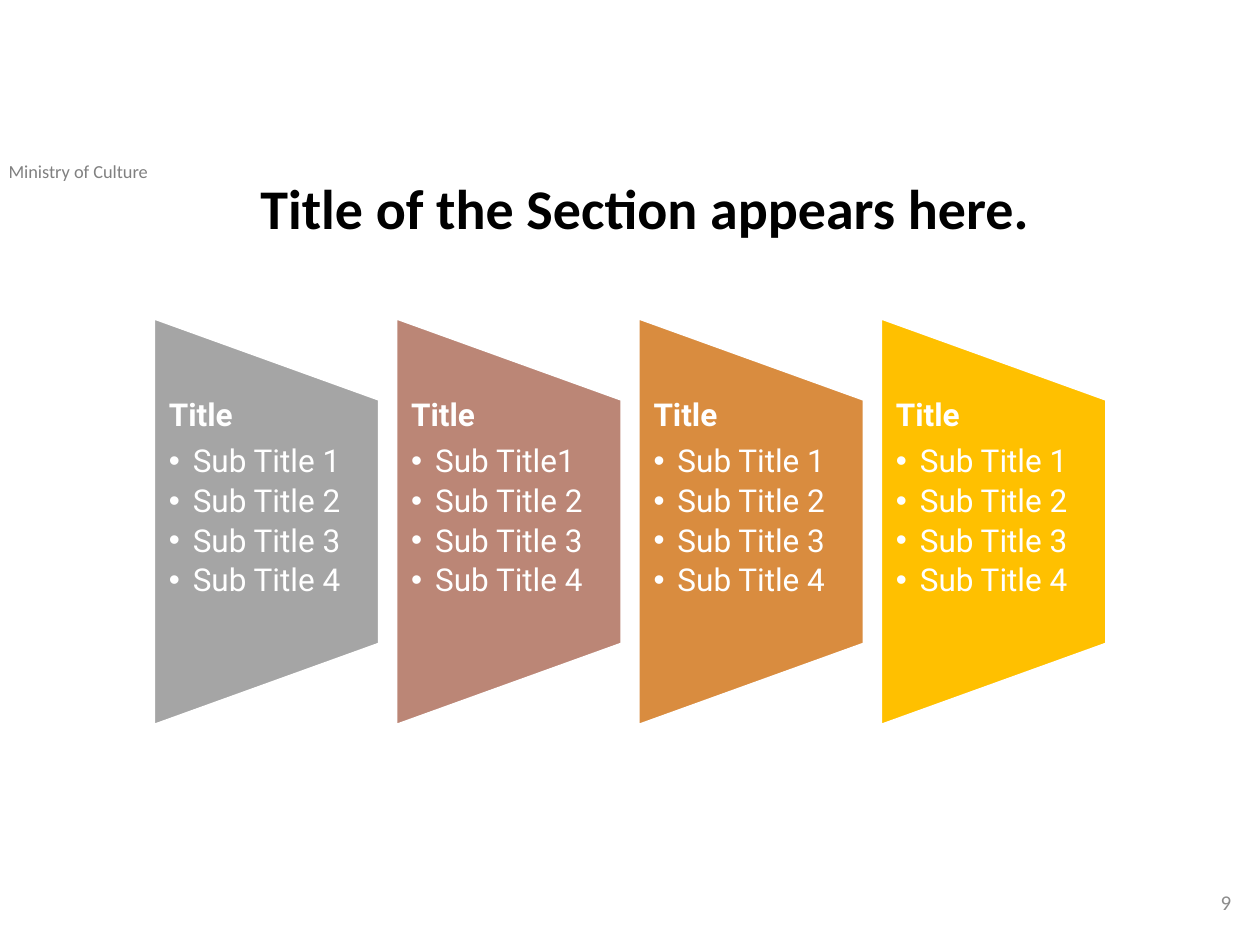
"""Build a section slide with four tapered list cards."""
from dataclasses import dataclass

import lxml.etree
import pptx
import pptx.dml.color
import pptx.enum.shapes
import pptx.enum.text
import pptx.oxml.ns
import pptx.util

Inches = pptx.util.Inches
Pt = pptx.util.Pt
ALIGN = pptx.enum.text.PP_ALIGN
ANCHOR = pptx.enum.text.MSO_ANCHOR


@dataclass(frozen=True)
class Theme:
    heading_font: str = "Calibri"
    card_font: str = "Roboto"
    title_size: float = 32
    card_size: float = 18
    number_size: float = 12
    footer_size: float = 10.5
    black: str = "000000"
    white: str = "FFFFFF"
    footer: str = "808080"
    number: str = "8C8C8C"
    cards: tuple = ("A5A5A5", "BB8676", "D98C3F", "FFC000")


def rgb(value):
    return pptx.dml.color.RGBColor.from_string(value)


def write(p, text, font, size, color, bold=False, align=ALIGN.LEFT,
          spacing=1.0, after=0, bullet=False):
    if bullet:
        pPr = p._p.get_or_add_pPr()
        pPr.set("marL", str(Inches(0.19)))
        pPr.set("indent", str(-Inches(0.19)))
        qn = pptx.oxml.ns.qn
        lxml.etree.SubElement(pPr, qn("a:buFont")).set("typeface", "Arial")
        lxml.etree.SubElement(pPr, qn("a:buChar")).set("char", "•")
    p.alignment = align
    p.line_spacing = spacing
    p.space_before = Pt(0)
    p.space_after = Pt(after)
    r = p.add_run()
    r.text = text
    r.font.name = font
    r.font.size = Pt(size)
    r.font.bold = bold
    r.font.color.rgb = rgb(color)


class SlideBuilder:
    def __init__(self, s, theme):
        self.s = s
        self.theme = theme

    def title(self, text, left, top, width, height):
        t = self.theme
        sp = self.s.shapes.title
        sp.left, sp.top = Inches(left), Inches(top)
        sp.width, sp.height = Inches(width), Inches(height)
        tf = sp.text_frame
        tf.auto_size = pptx.enum.text.MSO_AUTO_SIZE.NONE
        tf.vertical_anchor = ANCHOR.TOP
        write(tf.paragraphs[0], text, t.heading_font, t.title_size, t.black,
              bold=True, align=ALIGN.CENTER, spacing=0.9)

    def box(self, left, top, width, height, anchor=ANCHOR.TOP):
        sp = self.s.shapes.add_textbox(Inches(left), Inches(top),
                                       Inches(width), Inches(height))
        tf = sp.text_frame
        tf.word_wrap = True
        tf.vertical_anchor = anchor
        return tf

    def label(self, text, left, top, width, height, size, color,
              anchor=ANCHOR.TOP, align=ALIGN.LEFT):
        tf = self.box(left, top, width, height, anchor)
        write(tf.paragraphs[0], text, self.theme.heading_font, size, color,
              align=align)

    def taper(self, center_x, center_y, length, depth, color):
        sp = self.s.shapes.add_shape(
            pptx.enum.shapes.MSO_SHAPE.FLOWCHART_MANUAL_OPERATION,
            Inches(center_x - length / 2), Inches(center_y - depth / 2),
            Inches(length), Inches(depth))
        sp.rotation = 270
        sp.shadow.inherit = False
        sp.fill.solid()
        sp.fill.fore_color.rgb = rgb(color)
        sp.line.color.rgb = rgb(self.theme.white)
        sp.line.width = Pt(1.5)

    def card(self, heading, items, left, color):
        t = self.theme
        width = 1.79
        self.taper(left + width / 2, 4.14, 3.23, width, color)
        tf = self.box(left, 3.17, width, 1.94)
        tf.margin_left = tf.margin_right = Inches(0.12)
        tf.margin_top = tf.margin_bottom = 0
        style = dict(font=t.card_font, size=t.card_size, color=t.white,
                     spacing=0.9)
        write(tf.paragraphs[0], heading, bold=True, after=7, **style)
        for item in items:
            write(tf.add_paragraph(), item, after=3.2, bullet=True, **style)


def main():
    prs = pptx.Presentation()
    prs.slide_width, prs.slide_height = Inches(10), Inches(7.5)
    t = Theme()
    b = SlideBuilder(prs.slides.add_slide(prs.slide_layouts[5]), t)
    b.label("Ministry of Culture", -0.03, 1.22, 2.18, 0.28,
            t.footer_size, t.footer)
    b.label("9", 7.62, 6.96, 2.25, 0.4, t.number_size, t.number,
            anchor=ANCHOR.MIDDLE, align=ALIGN.RIGHT)

    first_items = ("Sub Title 1", "Sub Title1", "Sub Title 1", "Sub Title 1")
    other_items = [f"Sub Title {n}" for n in range(2, 5)]
    first_left, last_left = 1.22, 6.99
    pitch = (last_left - first_left) / (len(t.cards) - 1)
    for i, (color, first) in enumerate(zip(t.cards, first_items)):
        b.card("Title", [first, *other_items], first_left + i * pitch, color)

    b.title("Title of the Section appears here.", 1.93, 1.39, 6.38, 0.79)
    prs.save("out.pptx")


if __name__ == "__main__":
    main()
